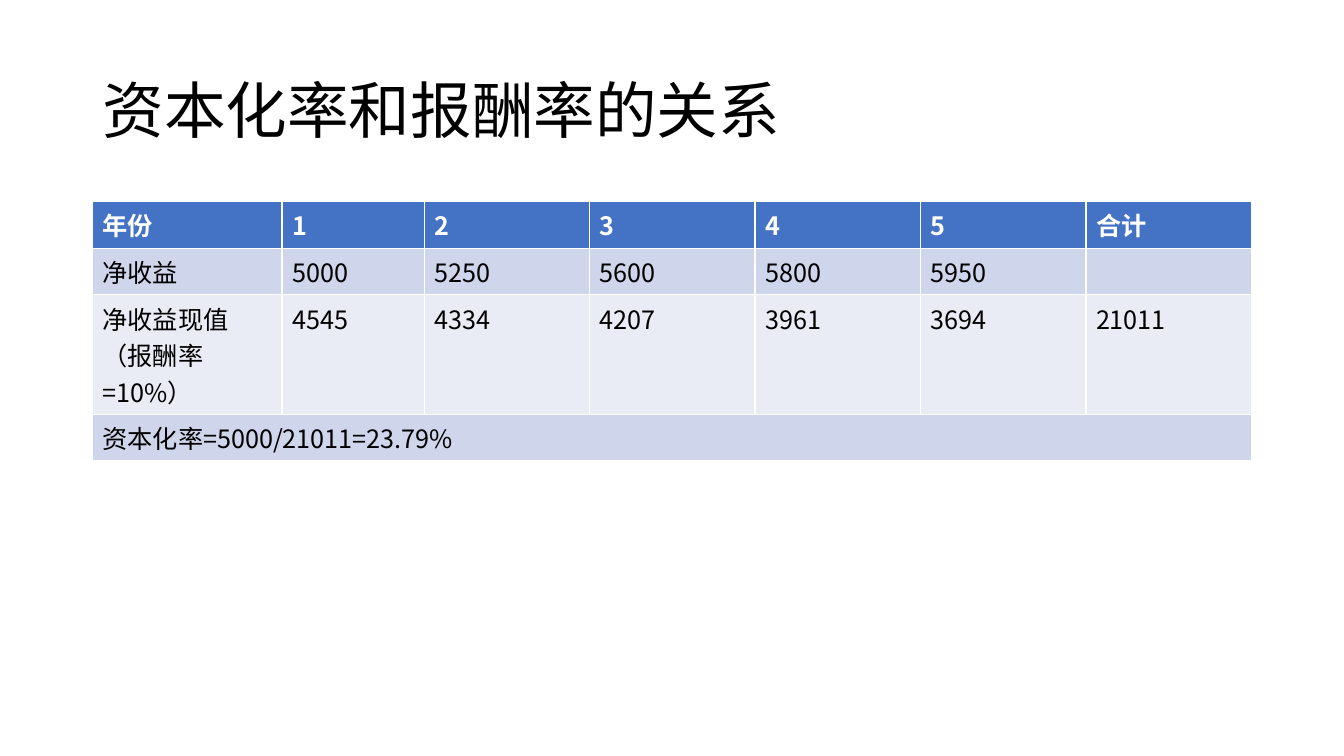
from lxml.etree import SubElement
from pptx import Presentation
from pptx.dml.color import RGBColor
from pptx.enum.text import MSO_ANCHOR, MSO_AUTO_SIZE, PP_ALIGN
from pptx.oxml.ns import qn
from pptx.util import Pt

COLORS = {"text": "000000", "header_text": "FFFFFF", "header": "4472C4",
          "band": "CFD5EA", "plain": "E9EBF5"}
FONT = "Noto Sans CJK SC"
LEFT, WIDTH = 66, 828
COLUMNS = [135.5, 101.5] + [118.2] * 5
ROW_HEIGHT = 29.2
ROWS = [
    ["年份", "1", "2", "3", "4", "5", "合计"],
    ["净收益", "5000", "5250", "5600", "5800", "5950", ""],
    ["净收益现值（报酬率=10%）", "4545", "4334", "4207", "3961", "3694", "21011"],
    ["资本化率=5000/21011=23.79%"],
]
ROW_FILLS = ["header", "band", "plain", "band"]


class SlideBuilder:
    """Holds the slide style and adds elements to the current slide."""

    def __init__(self, prs):
        self.s = prs.slides.add_slide(prs.slide_layouts[5])

    def style(self, p, size, color, bold=False):
        p.font.size = Pt(size)
        p.font.bold = bold
        p.font.color.rgb = RGBColor.from_string(COLORS[color])
        p.font.name = FONT
        SubElement(p._p.pPr.find(qn("a:defRPr")), qn("a:ea"), typeface=FONT)

    def title(self, text, top, height):
        sp = self.s.shapes.title
        sp.left, sp.top, sp.width, sp.height = Pt(LEFT), Pt(top), Pt(WIDTH), Pt(height)
        tf = sp.text_frame
        tf.text = text
        tf.auto_size = MSO_AUTO_SIZE.NONE
        tf.vertical_anchor = MSO_ANCHOR.MIDDLE
        p = tf.paragraphs[0]
        p.alignment = PP_ALIGN.LEFT
        p.line_spacing = 0.9
        self.style(p, 44, "text")

    def table(self, rows, fills, top):
        frame = self.s.shapes.add_table(len(rows), len(COLUMNS), Pt(LEFT), Pt(top),
                                        Pt(WIDTH), Pt(ROW_HEIGHT * len(rows)))
        table = frame.table
        for column, width in zip(table.columns, COLUMNS):
            column.width = Pt(width)
        for i, (values, fill) in enumerate(zip(rows, fills)):
            table.rows[i].height = Pt(ROW_HEIGHT)
            header = fill == "header"
            for j, value in enumerate(values):
                cell = table.cell(i, j)
                cell.fill.solid()
                cell.fill.fore_color.rgb = RGBColor.from_string(COLORS[fill])
                cell.text = value
                self.style(cell.text_frame.paragraphs[0], 18,
                           "header_text" if header else "text", header)
        last = len(rows) - 1
        table.cell(last, 0).merge(table.cell(last, len(COLUMNS) - 1))


def main():
    prs = Presentation()
    prs.slide_width, prs.slide_height = Pt(960), Pt(540)
    slide = SlideBuilder(prs)
    slide.title("资本化率和报酬率的关系", 28.8, 104.4)
    slide.table(ROWS, ROW_FILLS, 144)
    prs.save("out.pptx")


if __name__ == "__main__":
    main()
